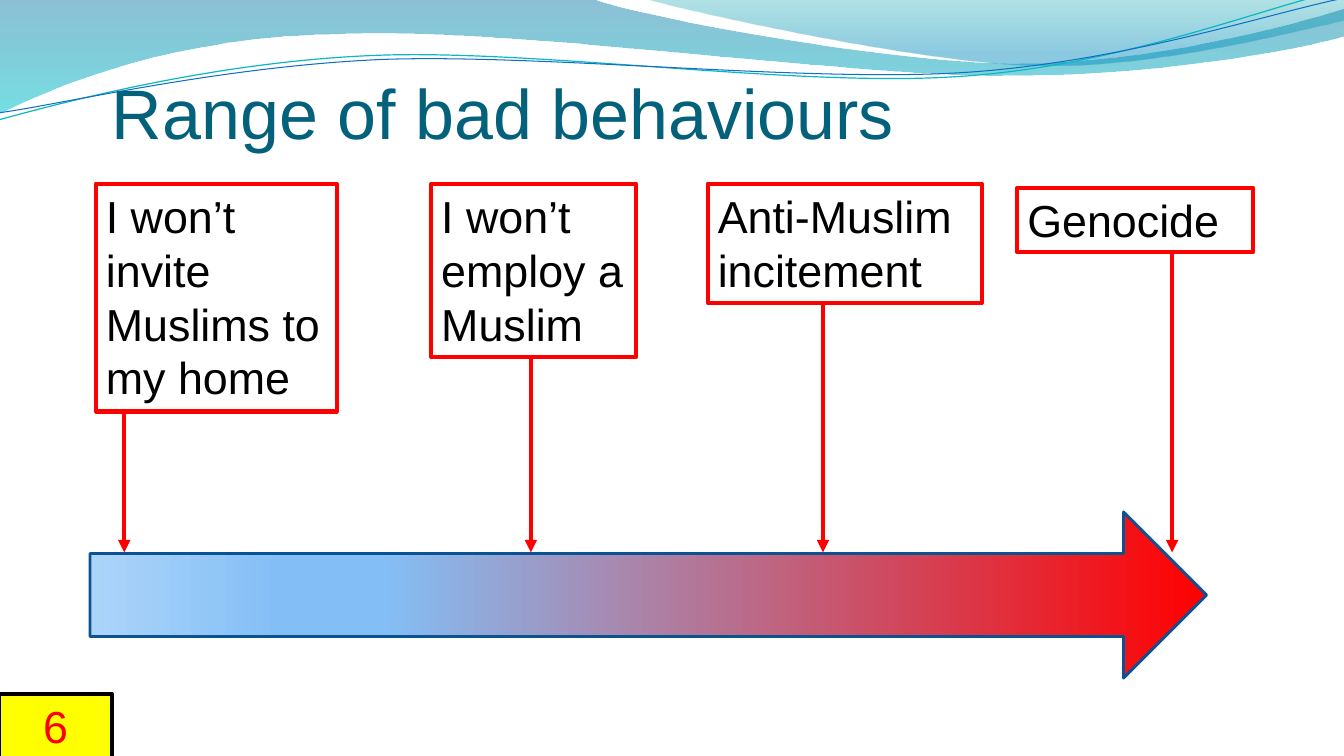
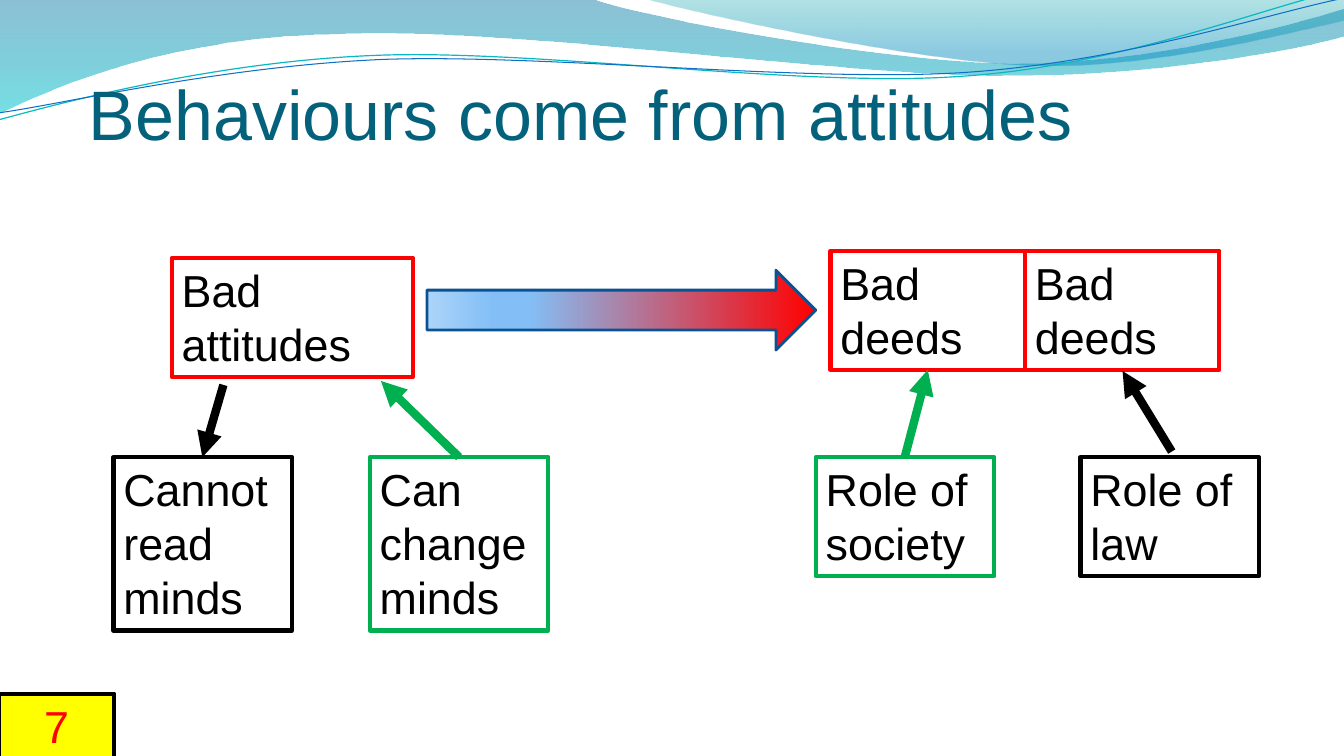
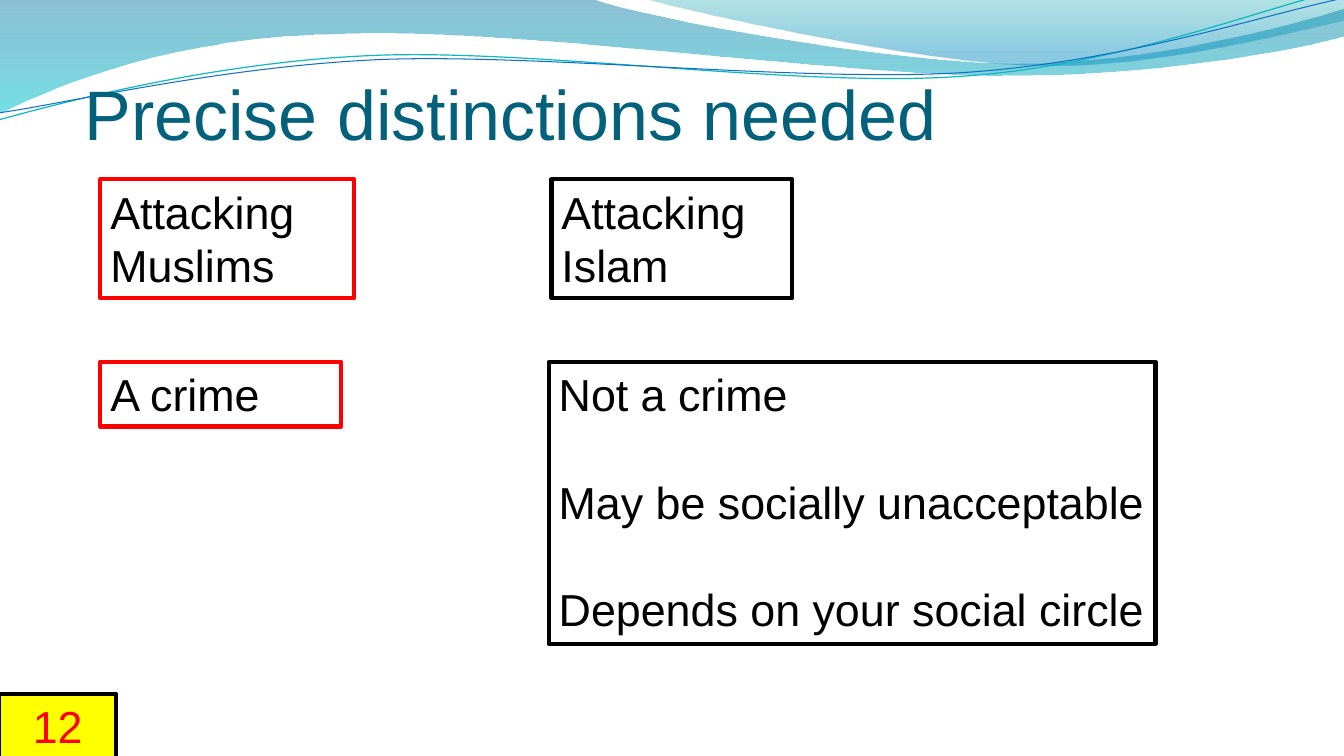
from dataclasses import dataclass

from pptx import Presentation
from pptx.dml.color import RGBColor
from pptx.enum.shapes import MSO_CONNECTOR, MSO_SHAPE
from pptx.enum.text import MSO_ANCHOR, MSO_AUTO_SIZE, PP_ALIGN
from pptx.oxml import parse_xml
from pptx.oxml.ns import nsdecls, qn
from pptx.oxml.xmlchemy import OxmlElement
from pptx.util import Cm, Pt

FONT = "Arial"
TITLE_TEAL = RGBColor(0x04, 0x61, 0x7B)
BLACK = RGBColor(0x00, 0x00, 0x00)
RED = RGBColor(0xFF, 0x00, 0x00)
GREEN = RGBColor(0x00, 0xB0, 0x50)
YELLOW = RGBColor(0xFF, 0xFF, 0x00)
ARROW_EDGE = RGBColor(0x0B, 0x52, 0x92)
LINE_TEAL = RGBColor(0x0A, 0xB8, 0xBF)
LINE_BLUE = RGBColor(0x0F, 0x6F, 0xC6)
WAVE_BLUE = RGBColor(0x00, 0x74, 0xA1)
WAVE_CYAN = RGBColor(0x00, 0xC6, 0xCF)
CREST_TEAL = RGBColor(0x00, 0xA1, 0xA9)
CREST_BLUE = RGBColor(0x00, 0x8B, 0xBF)
SKY = RGBColor(0x83, 0xBF, 0xF6)
PALE_SKY = RGBColor(0xAC, 0xD4, 0xF9)

# Gradient stops: position, color and opacity, in percent
DANGER_STOPS = [(0, RED, 100), (74, SKY, 100), (83, SKY, 100), (100, PALE_SKY, 100)]
WAVE_STOPS = [(0, WAVE_BLUE, 45), (100, WAVE_CYAN, 55)]
CREST_STOPS = [(0, CREST_TEAL, 30), (80, CREST_BLUE, 45)]

# Outlines in cm: a pair is a straight line, six numbers are a cubic curve
WAVE = [
    (0, 0), (14.91, -0.03), (16.1, 0.43, 22.48, 1.6, 25.68, 1.6),
    (28.91, 1.6, 32.46, 0.66, 33.86, 0.23), (33.91, 0.91),
    (33.3, 1.12, 29.46, 1.93, 25.25, 1.91), (21.06, 1.91, 12.93, 0.71, 8.71, 0.86),
    (4.37, 0.91, 1.55, 2.11, -0.03, 2.87),
]
CREST = [
    (16.23, -0.03), (17.25, 0.28, 23.09, 1.57, 26.04, 1.65),
    (28.98, 1.75, 32.56, 0.81, 33.86, 0.53), (33.86, 0),
]
TEAL_CURVE = [
    (-0.03, 3.02), (1.63, 2.57, 5.36, 1.57, 9.37, 1.4),
    (13.39, 1.22, 20.07, 2.21, 24.13, 1.93), (28.19, 1.68, 31.8, 0.2, 33.81, -0.25),
]
BLUE_CURVE = [
    (0, 2.84), (1.6, 2.62, 5.54, 1.68, 9.6, 1.5),
    (13.64, 1.35, 20.22, 2.08, 24.26, 1.83), (28.32, 1.57, 31.88, 0.36, 33.88, -0.05),
]
UNITS_PER_CM = 100

TEXT_SIZE = 32
LINE_PITCH = Pt(38.4)
LINE_HEIGHT = 1.37
BOX_PADDING = 0.26
TITLE_ONLY = 5


@dataclass
class Box:
    """An area in cm; inner() gives a part placed relative to it."""
    left: float
    top: float
    width: float = 0
    height: float = 0

    def inner(self, left, top, width=0, height=0):
        return Box(self.left + left, self.top + top, width, height)

    def lengths(self):
        return [Cm(value) for value in (self.left, self.top, self.width, self.height)]


def apply(target, formats):
    for name, value in formats.items():
        setattr(target, name, value)


def set_line(shape, color, width):
    shape.line.color.rgb = color
    shape.line.width = Pt(width)


def set_gradient(shape, stops, angle):
    """Fill with a linear gradient whose stops may be translucent."""
    stop_xml = "".join(
        f'<a:gs pos="{position * 1000}"><a:srgbClr val="{color}">'
        f'<a:alpha val="{opacity * 1000}"/></a:srgbClr></a:gs>'
        for position, color, opacity in stops)
    gradient = parse_xml(
        f'<a:gradFill {nsdecls("a")} rotWithShape="1"><a:gsLst>{stop_xml}</a:gsLst>'
        f'<a:lin ang="{angle * 60000}" scaled="0"/></a:gradFill>')
    shape.fill.background()
    properties = shape.element.spPr
    properties.replace(properties.find(qn("a:noFill")), gradient)


# Shared wave band

def add_outline(slide, outline, closed):
    """Build the outline from its corners, then bend its curved segments."""
    segments = [[round(value * UNITS_PER_CM) for value in segment] for segment in outline]
    corners = [segment[-2:] for segment in segments]
    left, top = (min(values) for values in zip(*corners))
    builder = slide.shapes.build_freeform(*corners[0], scale=Cm(1) / UNITS_PER_CM)
    builder.add_line_segments(corners[1:], close=closed)
    shape = builder.convert_to_shape()
    shape.shadow.inherit = False
    straights = list(shape.element.spPr.iter(qn("a:lnTo")))
    for straight, segment in zip(straights, segments[1:]):
        if len(segment) == 6:
            points = "".join(f'<a:pt x="{x - left}" y="{y - top}"/>'
                             for x, y in zip(segment[::2], segment[1::2]))
            curve = parse_xml(f'<a:cubicBezTo {nsdecls("a")}>{points}</a:cubicBezTo>')
            straight.getparent().replace(straight, curve)
    return shape


def add_wave_band(slide):
    """Draw the band and move it to the layout, behind every slide."""
    band = []
    for outline, stops in ((WAVE, WAVE_STOPS), (CREST, CREST_STOPS)):
        shape = add_outline(slide, outline, True)
        set_gradient(shape, stops, 90)
        shape.line.fill.background()
        band.append(shape)
    for outline, color, width in ((TEAL_CURVE, LINE_TEAL, 0.85), (BLUE_CURVE, LINE_BLUE, 0.75)):
        shape = add_outline(slide, outline, False)
        shape.fill.background()
        set_line(shape, color, width)
        band.append(shape)
    for index, shape in enumerate(band, start=2):
        slide.slide_layout.shapes.element.insert(index, shape.element)


# Slide parts

def add_text_box(slide, box, text, lines, color, text_color=BLACK,
                 fill=None, alignment=PP_ALIGN.LEFT, space_before=0):
    """An outlined box as high as its lines of text."""
    box.height = BOX_PADDING + LINE_HEIGHT * lines
    shape = slide.shapes.add_shape(MSO_SHAPE.RECTANGLE, *box.lengths())
    shape.shadow.inherit = False
    if fill is None:
        shape.fill.background()
    else:
        shape.fill.solid()
        shape.fill.fore_color.rgb = fill
    set_line(shape, color, 3)
    frame = shape.text_frame
    apply(frame, {"word_wrap": True, "vertical_anchor": MSO_ANCHOR.TOP})
    frame.text = text
    for index, paragraph in enumerate(frame.paragraphs):
        apply(paragraph, {"alignment": alignment, "line_spacing": LINE_PITCH,
                          "space_before": Pt(space_before if index else 0)})
        apply(paragraph.font, {"size": Pt(TEXT_SIZE), "name": FONT})
        paragraph.font.color.rgb = text_color


def add_danger_arrow(slide, box):
    shape = slide.shapes.add_shape(MSO_SHAPE.RIGHT_ARROW, *box.lengths())
    shape.shadow.inherit = False
    set_gradient(shape, DANGER_STOPS, 180)
    set_line(shape, ARROW_EDGE, 2)


def add_pointer(slide, start, end, color, width):
    connector = slide.shapes.add_connector(
        MSO_CONNECTOR.STRAIGHT, Cm(start.left), Cm(start.top), Cm(end.left), Cm(end.top))
    set_line(connector, color, width)
    head = OxmlElement("a:tailEnd")
    head.set("type", "triangle")
    properties = connector.element.spPr
    properties.find(qn("a:ln")).append(head)
    properties.append(OxmlElement("a:effectLst"))


def add_titled_slide(presentation, title, title_box, number, badge_width):
    slide = presentation.slides.add_slide(presentation.slide_layouts[TITLE_ONLY])
    shape = slide.shapes.title
    apply(shape, dict(zip(("left", "top", "width", "height"), title_box.lengths())))
    frame = shape.text_frame
    frame.text = title
    apply(frame, {"vertical_anchor": MSO_ANCHOR.BOTTOM, "word_wrap": True,
                  "auto_size": MSO_AUTO_SIZE.NONE, "margin_left": 0, "margin_right": 0,
                  "margin_top": Cm(0.13), "margin_bottom": 0})
    paragraph = frame.paragraphs[0]
    paragraph.alignment = PP_ALIGN.LEFT
    apply(paragraph.font, {"size": Pt(50), "name": FONT})
    paragraph.font.color.rgb = TITLE_TEAL
    add_text_box(slide, Box(-0.02, 17.48, badge_width), str(number), 1, BLACK,
                 text_color=RED, fill=YELLOW, alignment=PP_ALIGN.CENTER)
    return slide


# Slide contents

def add_behaviour_range(slide, area):
    add_danger_arrow(slide, area.inner(0, 8.27, 28.14, 4.19))
    behaviours = [  # text, left, top, width, lines, pointer position
        ("I won’t invite Muslims to my home", 0.15, 0, 6.07, 4, 0.86),
        ("I won’t employ a Muslim", 8.6, 0, 5.16, 3, 11.11),
        ("Anti-Muslim incitement", 15.57, 0, 6.91, 2, 18.47),
        ("Genocide", 23.37, 0.1, 5.94, 1, 27.27),
    ]
    for text, left, top, width, lines, pointer in behaviours:
        box = area.inner(left, top, width)
        add_text_box(slide, box, text, lines, RED)
        add_pointer(slide, area.inner(pointer, top + box.height),
                    area.inner(pointer, 9.29), RED, 3)


def add_attitude_diagram(slide, area):
    add_danger_arrow(slide, area.inner(7.9, 0.49, 9.8, 2.01))
    cause_row = 5.2
    boxes = [  # text, left, top, width, lines, color
        ("Bad attitudes", 1.47, 0.18, 6.07, 2, RED),
        ("Bad deeds", 18.07, 0, 4.9, 2, RED),
        ("Bad deeds", 22.97, 0, 4.9, 2, RED),
        ("Cannot read minds", 0, cause_row, 4.5, 3, BLACK),
        ("Can\nchange minds", 6.46, cause_row, 4.5, 3, GREEN),
        ("Role of society", 17.7, cause_row, 4.5, 2, GREEN),
        ("Role of law", 24.37, cause_row, 4.5, 2, BLACK),
    ]
    for text, left, top, width, lines, color in boxes:
        add_text_box(slide, area.inner(left, top, width), text, lines, color)
    pointers = [
        ((2.77, 3.38), (2.24, cause_row), BLACK),
        ((8.71, cause_row), (6.74, 3.28), GREEN),
        ((19.94, cause_row), (20.52, 3), GREEN),
        ((26.67, 5.06), (25.43, 3.03), BLACK),
    ]
    for start, end, color in pointers:
        add_pointer(slide, area.inner(*start), area.inner(*end), color, 6)


def add_distinctions(slide, area):
    verdict_row = 4.6
    verdicts = "Not a crime\nMay be socially unacceptable\nDepends on your social circle"
    boxes = [  # text, left, top, width, lines, color
        ("Attacking\nMuslims", 0, 0, 6.4, 2, RED),
        ("A crime", 0, verdict_row, 6.07, 1, RED),
        ("Attacking\nIslam", 11.37, 0, 6.07, 2, BLACK),
    ]
    for text, left, top, width, lines, color in boxes:
        add_text_box(slide, area.inner(left, top, width), text, lines, color)
    add_text_box(slide, area.inner(11.3, verdict_row, 15.29), verdicts, 5, BLACK,
                 space_before=38.4)


def main():
    presentation = Presentation()
    apply(presentation, {"slide_width": Cm(33.87), "slide_height": Cm(19.05)})
    slides = [  # title, title left and top, number, badge width, content, its area
        ("Range of bad behaviours", 2.82, 0.69, 6, 2.84,
         add_behaviour_range, Box(2.27, 4.63, 29.4, 12.5)),
        ("Behaviours come from attitudes", 2.24, 0.72, 7, 2.9,
         add_attitude_diagram, Box(2.86, 6.32, 28.9, 9.6)),
        ("Precise distinctions needed", 2.13, 0.72, 12, 2.95,
         add_distinctions, Box(2.53, 4.52, 26.6, 11.7)),
    ]
    for title, left, top, number, badge_width, add_content, area in slides:
        slide = add_titled_slide(presentation, title, Box(left, top, 30.76, 3.17),
                                 number, badge_width)
        add_content(slide, area)
    add_wave_band(presentation.slides[0])
    presentation.save("out.pptx")


if __name__ == "__main__":
    main()
